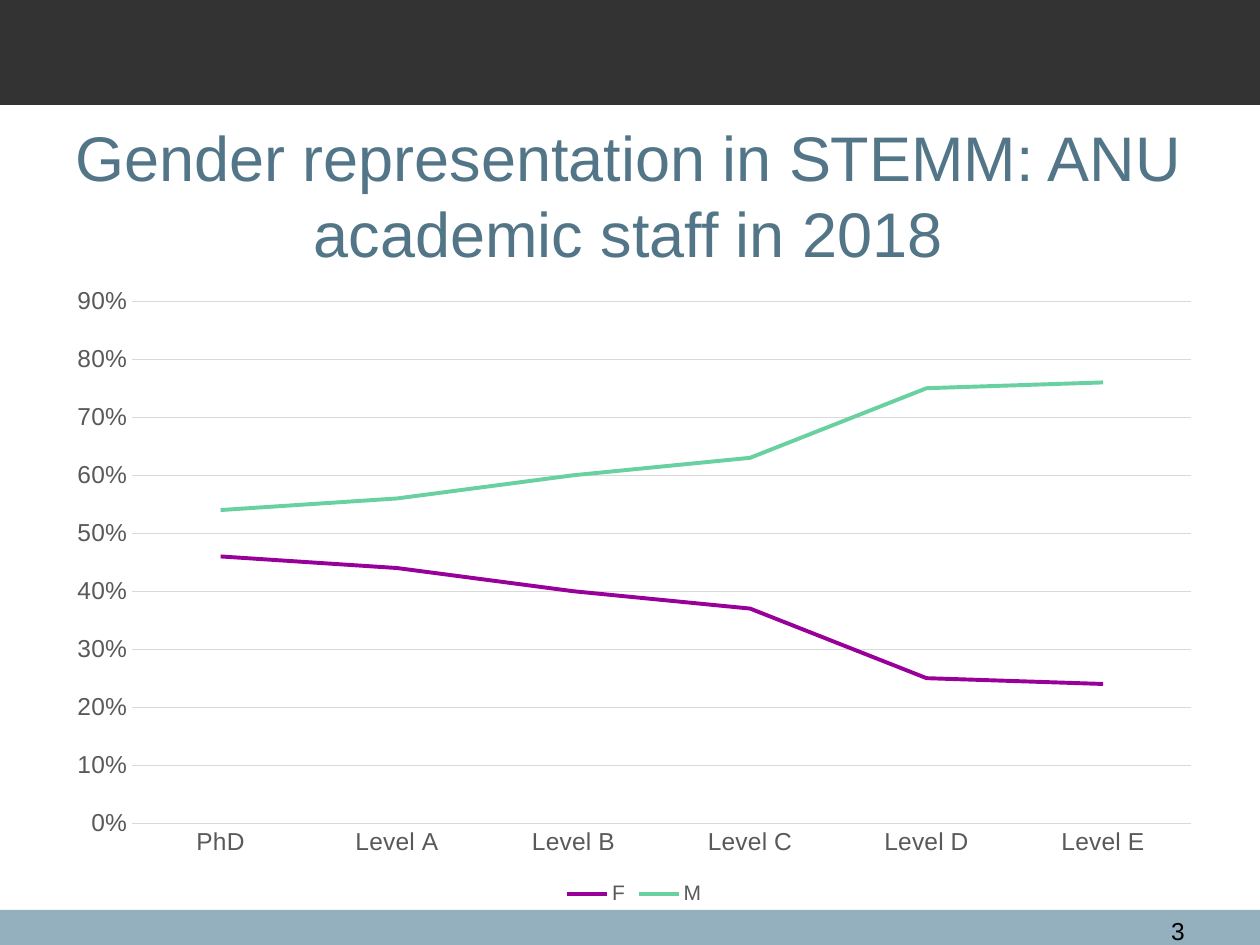
from pptx import Presentation
from pptx.chart.data import CategoryChartData
from pptx.dml.color import RGBColor
from pptx.enum.chart import XL_CHART_TYPE, XL_LEGEND_POSITION, XL_TICK_MARK
from pptx.enum.shapes import MSO_SHAPE
from pptx.enum.text import MSO_ANCHOR, PP_ALIGN
from pptx.util import Pt

DARK = RGBColor(0x33, 0x33, 0x33)
BLUE = RGBColor(0x94, 0xB0, 0xBE)
TITLE = RGBColor(0x52, 0x76, 0x88)
BLACK = RGBColor(0, 0, 0)
GRAY = RGBColor(0x59, 0x59, 0x59)
GRID = RGBColor(0xD9, 0xD9, 0xD9)
PURPLE = RGBColor(0x99, 0x00, 0x99)
GREEN = RGBColor(0x68, 0xD0, 0xA1)


def set_font(font, size, color):
    font.name = "Arial"
    font.size = Pt(size)
    font.color.rgb = color


prs = Presentation()
prs.slide_width, prs.slide_height = Pt(720), Pt(540)
s = prs.slides.add_slide(prs.slide_layouts[5])

for top, height, color in [(520, 20, BLUE), (0, 60, DARK)]:
    sp = s.shapes.add_shape(MSO_SHAPE.RECTANGLE, 0, Pt(top), Pt(720), Pt(height))
    sp.shadow.inherit = False
    sp.fill.solid()
    sp.fill.fore_color.rgb = color
    sp.line.fill.background()

title = s.shapes.title
title.left, title.top, title.width, title.height = Pt(35), Pt(66), Pt(648), Pt(90)
tf = title.text_frame
tf.word_wrap = True
tf.vertical_anchor = MSO_ANCHOR.MIDDLE
p = tf.paragraphs[0]
p.text = "Gender representation in STEMM: ANU academic staff in 2018"
p.alignment = PP_ALIGN.CENTER
set_font(p.font, 36, TITLE)

tf = s.shapes.add_textbox(Pt(638), Pt(520), Pt(46), Pt(17)).text_frame
tf.word_wrap = True
p = tf.paragraphs[0]
p.text = "3"
p.alignment = PP_ALIGN.RIGHT
set_font(p.font, 14, BLACK)

data = CategoryChartData(number_format="0%")
data.categories = ["PhD", "Level A", "Level B", "Level C", "Level D", "Level E"]
data.add_series("F", [0.46, 0.44, 0.4, 0.37, 0.25, 0.24])
data.add_series("M", [0.54, 0.56, 0.6, 0.63, 0.75, 0.76])
chart = s.shapes.add_chart(
    XL_CHART_TYPE.LINE, Pt(31), Pt(157), Pt(663), Pt(363), data
).chart
set_font(chart.font, 10, BLACK)
chart.has_title = False
chart.has_legend = True
chart.legend.position = XL_LEGEND_POSITION.BOTTOM
chart.legend.include_in_layout = False
set_font(chart.legend.font, 12, GRAY)

cat_axis, val_axis = chart.category_axis, chart.value_axis
for axis in (cat_axis, val_axis):
    axis.major_tick_mark = axis.minor_tick_mark = XL_TICK_MARK.NONE
    set_font(axis.tick_labels.font, 14, GRAY)
val_axis.minimum_scale, val_axis.maximum_scale = 0, 0.9
val_axis.major_unit = 0.1
val_axis.tick_labels.number_format = "0%"
val_axis.tick_labels.number_format_is_linked = False
val_axis.format.line.fill.background()
for line in (cat_axis.format.line, val_axis.major_gridlines.format.line):
    line.color.rgb = GRID
    line.width = Pt(0.75)

chart.plots[0].vary_by_categories = False
for series, color in zip(chart.plots[0].series, (PURPLE, GREEN)):
    series.smooth = False
    series.format.line.color.rgb = color
    series.format.line.width = Pt(2.25)

prs.save("out.pptx")
